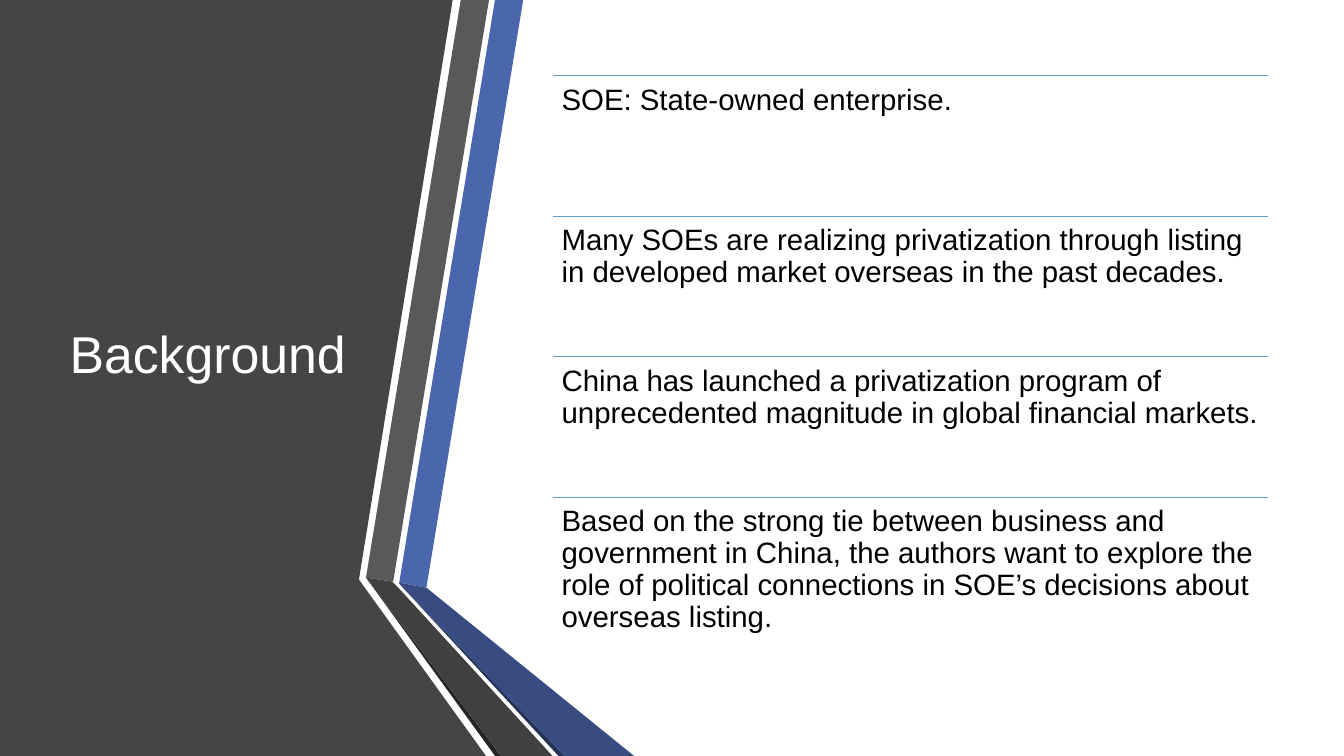
import pptx
import pptx.util
import pptx.dml.color
import pptx.enum.shapes
import pptx.enum.text
from dataclasses import dataclass
from lxml import etree
from pptx.util import Inches

TITLE = "Background"
POINTS = [
    "SOE: State-owned enterprise.",
    "Many SOEs are realizing privatization through listing in developed market "
    "overseas in the past decades.",
    "China has launched a privatization program of unprecedented magnitude in "
    "global financial markets.",
    "Based on the strong tie between business and government in China, the authors "
    "want to explore the role of political connections in SOE’s decisions about "
    "overseas listing.",
]


@dataclass(frozen=True)
class Theme:
    font: str = "Arial"
    title_size: float = 37
    body_size: float = 21
    title: str = "FFFFFF"
    body: str = "000000"
    rule: str = "629DD1"
    panel: str = "454545"
    blue: str = "4A66AC"
    blue_fold: str = "384C81"
    blue_edge: str = "253356"
    grey: str = "595959"
    grey_fold: str = "404040"
    grey_edge: str = "262626"


THEME = Theme()

# Fill and outline of each folded band, from back to front
BANDS = [
    (THEME.panel, [(0, 0), (4.49, 0), (3.56, 5.75), (4.82, 7.5), (0, 7.5)]),
    (THEME.blue, [(3.96, 5.78), (4.23, 5.83), (5.19, 0), (4.91, 0)]),
    (THEME.grey, [(4.85, 0), (4.57, 0), (3.63, 5.73), (3.9, 5.77)]),
    (THEME.grey_edge, [(3.63, 5.73), (4.91, 7.5), (4.97, 7.5)]),
    (THEME.blue_edge, [(3.96, 5.79), (5.54, 7.5), (5.6, 7.5)]),
    (THEME.blue_fold, [(3.96, 5.79), (5.6, 7.5), (6.29, 7.5), (4.23, 5.83), (3.96, 5.78)]),
    (THEME.grey_fold, [(5.48, 7.5), (3.95, 5.83), (3.89, 5.77), (3.63, 5.73), (4.97, 7.5)]),
]

LIST_LEFT, LIST_TOP, LIST_WIDTH, LIST_HEIGHT = 5.48, 0.75, 7.1, 5.58
ROW_HEIGHT = LIST_HEIGHT / len(POINTS)


def rgb(code):
    return pptx.dml.color.RGBColor.from_string(code)


def add_band(slide, color, outline):
    corners = [(Inches(x), Inches(y)) for x, y in outline]
    builder = slide.shapes.build_freeform(*corners[0])
    builder.add_line_segments(corners[1:], close=True)
    sp = builder.convert_to_shape()
    sp.shadow.inherit = False
    sp.fill.solid()
    sp.fill.fore_color.rgb = rgb(color)
    sp.line.fill.background()


def add_rule(slide, y):
    line = slide.shapes.add_connector(
        pptx.enum.shapes.MSO_CONNECTOR.STRAIGHT,
        Inches(LIST_LEFT), Inches(y), Inches(LIST_LEFT + LIST_WIDTH), Inches(y))
    line.line.color.rgb = rgb(THEME.rule)
    line.line.width = pptx.util.Pt(0.5)
    etree.SubElement(line._element.spPr, pptx.oxml.ns.qn("a:effectLst"))


def write(tf, text, size, color):
    tf.word_wrap = True
    tf.auto_size = pptx.enum.text.MSO_AUTO_SIZE.NONE
    p = tf.paragraphs[0]
    p.alignment = pptx.enum.text.PP_ALIGN.LEFT
    p.line_spacing = 0.9
    r = p.add_run()
    r.text = text
    r.font.name = THEME.font
    r.font.size = pptx.util.Pt(size)
    r.font.color.rgb = rgb(color)


def add_point(slide, y, text):
    box = slide.shapes.add_textbox(
        Inches(LIST_LEFT), Inches(y), Inches(LIST_WIDTH), Inches(ROW_HEIGHT))
    tf = box.text_frame
    tf.margin_left = tf.margin_right = tf.margin_top = tf.margin_bottom = Inches(0.09)
    tf.vertical_anchor = pptx.enum.text.MSO_ANCHOR.TOP
    write(tf, text, THEME.body_size, THEME.body)


def place_title(slide):
    title = slide.shapes.title
    title.left, title.top = Inches(0.59), Inches(0.75)
    title.width, title.height = Inches(3.04), Inches(5.58)
    title.text_frame.vertical_anchor = pptx.enum.text.MSO_ANCHOR.MIDDLE
    write(title.text_frame, TITLE, THEME.title_size, THEME.title)
    # Bring the title in front of the dark panel
    slide.shapes._spTree.append(title._element)


def main():
    prs = pptx.Presentation()
    prs.slide_width, prs.slide_height = Inches(13.33), Inches(7.5)
    slide = prs.slides.add_slide(prs.slide_layouts[5])
    for color, outline in BANDS:
        add_band(slide, color, outline)
    place_title(slide)
    for i, text in enumerate(POINTS):
        y = LIST_TOP + i * ROW_HEIGHT
        add_rule(slide, y)
        add_point(slide, y, text)
    prs.save("out.pptx")


if __name__ == "__main__":
    main()
